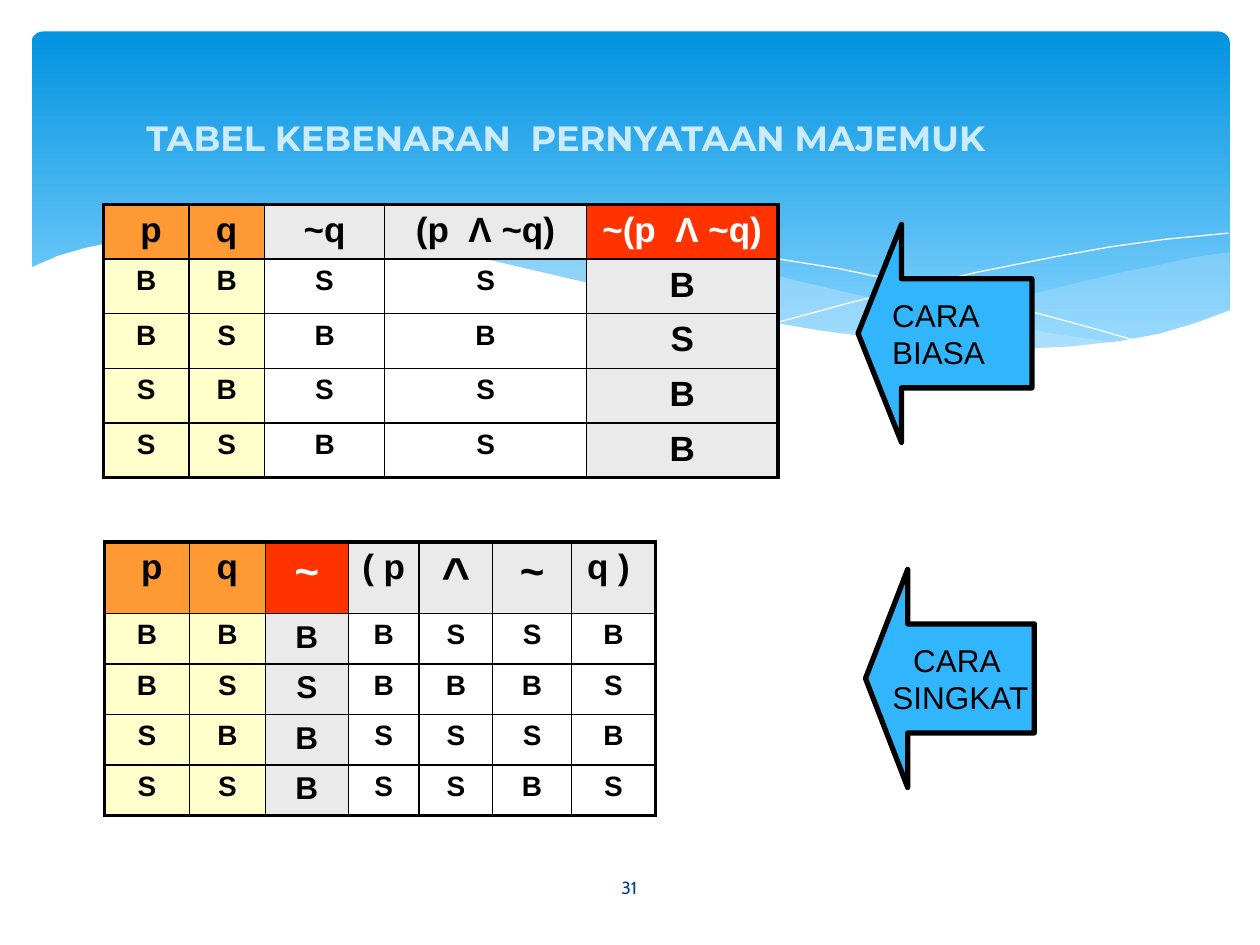
from dataclasses import dataclass
from typing import Optional

from lxml.etree import SubElement
from pptx import Presentation
from pptx.dml.color import RGBColor
from pptx.enum.shapes import MSO_SHAPE
from pptx.enum.text import MSO_ANCHOR, PP_ALIGN
from pptx.oxml.ns import qn
from pptx.util import Pt

BLACK = RGBColor(0x00, 0x00, 0x00)
WHITE = RGBColor(0xFF, 0xFF, 0xFF)
SKY_TOP = RGBColor(0x02, 0x93, 0xE0)
SKY_BOTTOM = RGBColor(0x83, 0xD3, 0xFE)
WAVE_BLUE = RGBColor(0xC6, 0xE7, 0xFC)
TITLE_BLUE = RGBColor(0xCD, 0xEB, 0xFF)
NUMBER_BLUE = RGBColor(0x07, 0x3E, 0x87)
ARROW_BLUE = RGBColor(0x31, 0xB6, 0xFD)
ORANGE = RGBColor(0xFF, 0x99, 0x33)
CREAM = RGBColor(0xFF, 0xFF, 0xCC)
GRAY = RGBColor(0xEA, 0xEA, 0xEA)
RED = RGBColor(0xFF, 0x33, 0x00)


@dataclass
class Wave:
    points: list[tuple[float, float]]
    fill: Optional[RGBColor] = None
    opacity: int = 100


@dataclass
class Column:
    header: str
    width: float
    values: str
    header_fill: RGBColor = GRAY
    body_fill: Optional[RGBColor] = None
    header_color: RGBColor = BLACK
    header_size: float = 20
    body_size: float = 16


@dataclass
class TruthTable:
    left: float
    top: float
    header_height: float
    row_height: float
    columns: list[Column]


@dataclass
class Arrow:
    left: float
    top: float
    width: float
    height: float
    lines: list[str]
    align: PP_ALIGN


WAVES = [
    Wave([(702.7, 144), (682.6, 146.9), (663.1, 151.2), (641.5, 155.5), (619.9, 160.6),
          (579.6, 170.6), (542.2, 178.6), (508.3, 185), (475.9, 190.8), (497.5, 193.7),
          (517.7, 195.8), (545, 198.7), (578.2, 200.2), (607.7, 199.4), (634.3, 196.6),
          (657.4, 192.2), (678.2, 186.5), (702.7, 177.8)], WAVE_BLUE, 29),
    Wave([(643, 196.6), (602.6, 190.8), (558, 182.9), (508.3, 172.8), (452.9, 159.8),
          (420.5, 151.9), (389.5, 146.2), (361.4, 141.1), (334.8, 137.5), (302.4, 134.6),
          (273.6, 133.2), (247.7, 133.9), (225.4, 135.4), (205.9, 137.5), (232.6, 141.1),
          (260.6, 146.2), (290.9, 151.9), (323.3, 159.8), (381.6, 172.8), (432.7, 183.6),
          (478.8, 191.5), (519.8, 197.3), (556.6, 199.4), (589, 200.2), (617, 199.4)],
         WAVE_BLUE, 40),
    Wave([(222.5, 140.4), (241.2, 137.5), (269.3, 135.4), (299.5, 134.6), (337.7, 136.1),
          (383.8, 139.7), (437.8, 146.9), (478.8, 153.4), (523.4, 162.7), (572.4, 173.5),
          (625.7, 187.9), (653, 195.8)]),
    Wave([(441.4, 185), (483.8, 173.5), (518.4, 164.9), (558.7, 155.5), (601.9, 146.9),
          (634.3, 141.1), (665.3, 136.8), (702, 133.2)]),
    Wave([(703.4, 177.1), (684, 184.3), (662.4, 190.8), (638.6, 195.1), (612, 198),
          (582.5, 199.4), (547.9, 198), (509.8, 194.4), (466.6, 188.6), (416.9, 180),
          (362.2, 167.8), (321.8, 158.4), (281.5, 149), (244.8, 141.8), (210.2, 136.8),
          (180, 133.9), (151.9, 132.5), (127.4, 132.5), (105.1, 133.2), (85.7, 134.6),
          (68.4, 137.5), (48.2, 141.8), (33.1, 146.2), (16.6, 153.4), (16.6, 236.9),
          (703.4, 236.9)], WHITE),
]

TABLES = [
    TruthTable(59.2, 116.8, 30, 29.6, [
        Column(" p", 48.7, "BBSS", ORANGE, CREAM),
        Column("q", 43.3, "BSBS", ORANGE, CREAM),
        Column("~q", 68.6, "SBSB"),
        Column("(p  Λ ~q)", 115.4, "SBSS"),
        Column("~(p  Λ ~q)", 109.4, "BSBB", RED, GRAY, WHITE, body_size=20),
    ]),
    TruthTable(59.6, 309.7, 38.2, 27.4, [
        Column(" p", 48.7, "BBSS", ORANGE, CREAM),
        Column("q", 43.3, "BSBS", ORANGE, CREAM),
        Column("~", 47.5, "BSBB", RED, GRAY, WHITE, 24, 18),
        Column("( p", 40.5, "BBSS"),
        Column("^", 42, "SBSS", header_size=28),
        Column("~", 45, "SBSB", header_size=24),
        Column("q ) ", 48, "BSBS"),
    ]),
]

ARROWS = [
    Arrow(490.3, 128.2, 99.4, 124.6, ["CARA", "BIASA"], PP_ALIGN.LEFT),
    Arrow(494.6, 325.4, 96.5, 124.6, ["CARA ", "SINGKAT"], PP_ALIGN.CENTER),
]


def write_text(frame, *lines: str, size: float, color: RGBColor, font: str = "Arial",
               bold: bool = False, align: PP_ALIGN = PP_ALIGN.CENTER,
               anchor: MSO_ANCHOR = MSO_ANCHOR.MIDDLE, wrap: bool = True) -> None:
    frame.word_wrap = wrap
    frame.vertical_anchor = anchor
    for index, line in enumerate(lines):
        para = frame.paragraphs[0] if index == 0 else frame.add_paragraph()
        para.alignment = align
        span = para.add_run()
        span.text = line
        span.font.name = font
        span.font.size = Pt(size)
        span.font.bold = bold
        span.font.color.rgb = color


def draw_sky(page) -> None:
    sky = page.shapes.add_shape(MSO_SHAPE.ROUNDED_RECTANGLE, Pt(18), Pt(18), Pt(684.7), Pt(194.4))
    sky.adjustments[0] = 0.034
    sky.shadow.inherit = False
    sky.line.fill.background()
    sky.fill.gradient()
    sky.fill.gradient_angle = 270
    for stop, color, position in zip(sky.fill.gradient_stops, (SKY_TOP, SKY_BOTTOM), (0, 0.9)):
        stop.color.rgb = color
        stop.position = position


def draw_wave(page, wave: Wave) -> None:
    points = [(Pt(x), Pt(y)) for x, y in wave.points]
    builder = page.shapes.build_freeform(*points[0])
    builder.add_line_segments(points[1:], close=wave.fill is not None)
    shape = builder.convert_to_shape()
    shape.shadow.inherit = False
    if wave.fill is None:
        shape.fill.background()
        shape.line.color.rgb = WHITE
        shape.line.width = Pt(0)
        return
    shape.line.fill.background()
    shape.fill.solid()
    shape.fill.fore_color.rgb = wave.fill
    if wave.opacity < 100:
        color = shape.fill._xPr.find(qn("a:solidFill"))[0]
        SubElement(color, qn("a:alpha"), val=str(wave.opacity * 1000))


def set_borders(cell, **widths: float) -> None:
    properties = cell._tc.get_or_add_tcPr()
    for index, (side, width) in enumerate(widths.items()):
        border = properties.makeelement(qn(f"a:ln{side}"), {"w": str(Pt(width))})
        fill = SubElement(border, qn("a:solidFill"))
        SubElement(fill, qn("a:srgbClr"), val=str(BLACK))
        properties.insert(index, border)


def draw_table(page, truth: TruthTable) -> None:
    heights = [truth.header_height] + [truth.row_height] * len(truth.columns[0].values)
    width = sum(column.width for column in truth.columns)
    last_row, last_column = len(heights) - 1, len(truth.columns) - 1
    table = page.shapes.add_table(len(heights), len(truth.columns), Pt(truth.left), Pt(truth.top),
                                  Pt(width), Pt(sum(heights))).table
    table.first_row = table.horz_banding = False
    for row, height in zip(table.rows, heights):
        row.height = Pt(height)
    for c, column in enumerate(truth.columns):
        table.columns[c].width = Pt(column.width)
        for r, text in enumerate([column.header, *column.values]):
            cell = table.cell(r, c)
            fill = column.body_fill if r else column.header_fill
            if fill is None:
                cell.fill.background()
            else:
                cell.fill.solid()
                cell.fill.fore_color.rgb = fill
            set_borders(cell, L=2.25 if c == 0 else 1, R=2.25 if c == last_column else 1,
                        T=2.25 if r == 0 else 1, B=2.25 if r == last_row else 1)
            write_text(cell.text_frame, text, bold=True, anchor=MSO_ANCHOR.TOP,
                       size=column.body_size if r else column.header_size,
                       color=BLACK if r else column.header_color)


def draw_arrow(page, arrow: Arrow) -> None:
    shape = page.shapes.add_shape(MSO_SHAPE.LEFT_ARROW, Pt(arrow.left), Pt(arrow.top),
                                  Pt(arrow.width), Pt(arrow.height))
    shape.adjustments[0], shape.adjustments[1] = 0.5, 0.25
    shape.shadow.inherit = False
    shape.fill.solid()
    shape.fill.fore_color.rgb = ARROW_BLUE
    shape.line.color.rgb = BLACK
    shape.line.width = Pt(3)
    write_text(shape.text_frame, *arrow.lines, size=18, color=BLACK, align=arrow.align, wrap=False)


def main() -> None:
    deck = Presentation()
    deck.slide_width, deck.slide_height = Pt(720), Pt(540)
    page = deck.slides.add_slide(deck.slide_layouts[5])
    draw_sky(page)
    for wave in WAVES:
        draw_wave(page, wave)
    title = page.shapes.title
    page.shapes._spTree.append(title._element)
    title.left, title.top, title.width, title.height = Pt(49.7), Pt(60.5), Pt(553), Pt(36)
    write_text(title.text_frame, "TABEL KEBENARAN  PERNYATAAN MAJEMUK ", size=20,
               color=TITLE_BLUE, font="Montserrat", bold=True)
    number = page.shapes.add_textbox(Pt(313.9), Pt(492.5), Pt(91.4), Pt(28.8))
    write_text(number.text_frame, "31", size=10, color=NUMBER_BLUE, font="Cabin")
    for truth in TABLES:
        draw_table(page, truth)
    for arrow in ARROWS:
        draw_arrow(page, arrow)
    deck.save("out.pptx")


if __name__ == "__main__":
    main()
